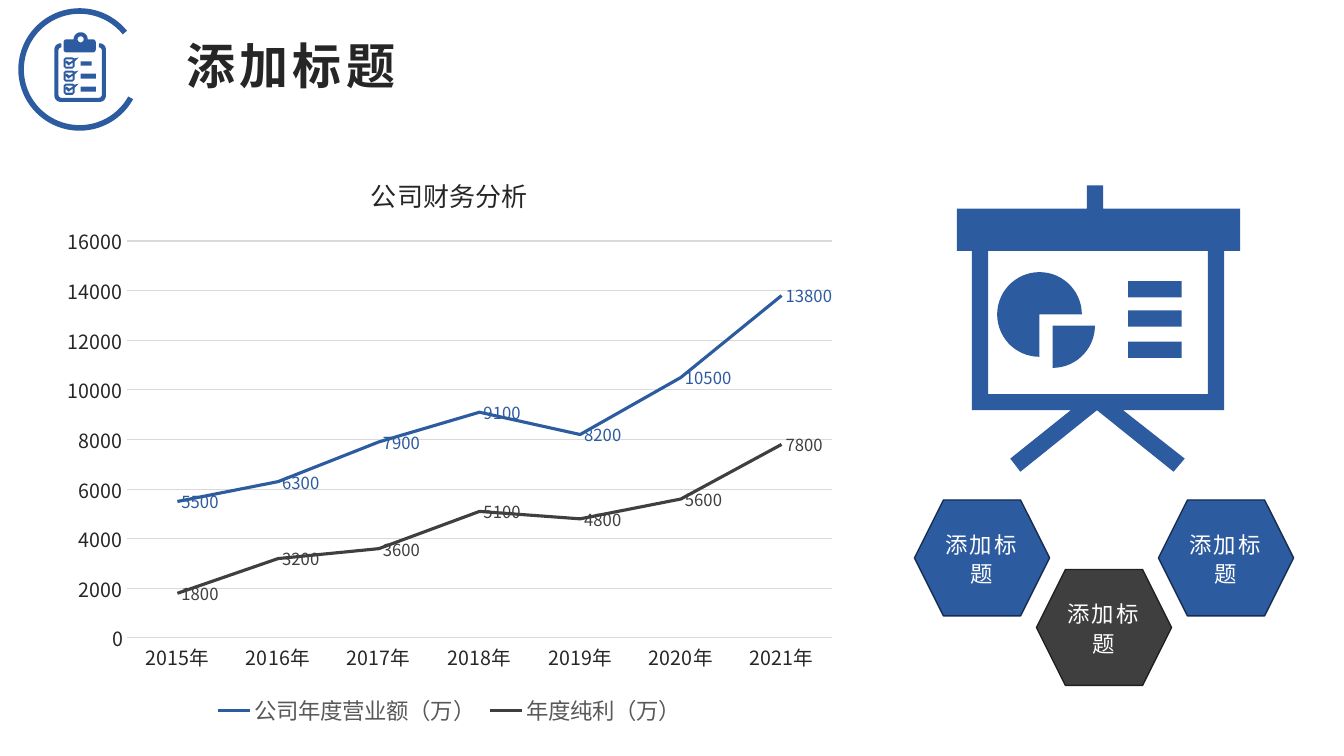
import math
from dataclasses import dataclass

from pptx import Presentation
from pptx import util as u
from pptx.chart import data as cd
from pptx.dml import color
from pptx.enum import chart as ch, shapes, text
from pptx.oxml import parse_xml
from pptx.oxml import ns
from pptx.oxml import xmlchemy as xc

FONT = "Noto Sans CJK SC"
COLORS = {
    "blue": "2D5B9F", "navy": "172D50", "dark": "3F3F3F", "black": "202020",
    "ink": "262626", "legend": "595959", "grid": "D9D9D9", "white": "FFFFFF",
}
Point = tuple[float, float]
Contour = list[Point]


@dataclass
class Hexagon:
    left: float
    top: float
    fill: str
    line: str


@dataclass
class Series:
    name: str
    values: tuple[int, ...]
    color: str


HEXAGONS = [
    Hexagon(9.07 + 1.21 * i, top, fill, line)
    for i, (top, fill, line) in enumerate(
        [(4.96, "blue", "navy"), (5.65, "dark", "black"), (4.96, "blue", "navy")])
]
YEARS = [f"{year}年" for year in range(2015, 2022)]
SERIES = [
    Series("公司年度营业额（万）", (5500, 6300, 7900, 9100, 8200, 10500, 13800), "blue"),
    Series("年度纯利（万）", (1800, 3200, 3600, 5100, 4800, 5600, 7800), "dark"),
]


def rgb(name: str) -> color.RGBColor:
    return color.RGBColor.from_string(COLORS[name])


def set_font(font, size: float, name: str, bold: bool = False) -> None:
    font.size = u.Pt(size)
    font.bold = bold
    font.color.rgb = rgb(name)
    font.name = FONT
    ea = xc.OxmlElement("a:ea")
    ea.set("typeface", FONT)
    font._element.find(ns.qn("a:latin")).addnext(ea)


def add_run(p, words: str, size: float, name: str, spacing: float, bold: bool = False) -> None:
    r = p.add_run()
    r.text = words
    set_font(r.font, size, name, bold)
    r.font._element.set("spc", str(round(spacing * 100)))


def rect(left: float, top: float, width: float, height: float) -> Contour:
    right, bottom = left + width, top + height
    return [(left, top), (right, top), (right, bottom), (left, bottom)]


def arc(x: float, y: float, radius: float, start: float, end: float) -> Contour:
    steps = max(4, round(abs(end - start) / 6))
    angles = [math.radians(start + (end - start) * i / steps) for i in range(steps + 1)]
    return [(x + radius * math.cos(a), y + radius * math.sin(a)) for a in angles]


def add_icon(s, contours: list[Contour]) -> None:
    scaled = [[(u.Inches(x), u.Inches(y)) for x, y in c] for c in contours]
    builder = s.shapes.build_freeform(*scaled[0][0], scale=1.0)
    builder.add_line_segments(scaled[0][1:], close=True)
    for contour in scaled[1:]:
        builder.move_to(*contour[0])
        builder.add_line_segments(contour[1:], close=True)
    sp = builder.convert_to_shape()
    sp.shadow.inherit = False
    sp.fill.solid()
    sp.fill.fore_color.rgb = rgb("blue")
    sp.line.fill.background()


def clipboard() -> list[Contour]:
    board = [
        (0.61, 0.47), (0.61, 0.43), *arc(0.6, 0.49, 0.06, 270, 180),
        *arc(0.6, 0.95, 0.06, 180, 90), *arc(0.99, 0.95, 0.06, 90, 0),
        *arc(0.99, 0.49, 0.06, 0, -90), (0.98, 0.43), (0.98, 0.47),
        *arc(0.98, 0.5, 0.03, -90, 0), *arc(0.98, 0.94, 0.03, 0, 90),
        *arc(0.61, 0.94, 0.03, 90, 180), *arc(0.61, 0.5, 0.03, 180, 270),
    ]
    clip = [
        *arc(0.66, 0.42, 0.03, 180, 270), *arc(0.8, 0.39, 0.07, 180, 360),
        *arc(0.92, 0.42, 0.03, 270, 360), *arc(0.92, 0.49, 0.03, 0, 90),
        *arc(0.66, 0.49, 0.03, 90, 180),
    ]
    box = [(0.74, 0.71), (0.72, 0.7), (0.65, 0.7), (0.63, 0.72), (0.63, 0.79),
           (0.65, 0.81), (0.72, 0.81), (0.74, 0.79), (0.74, 0.74), (0.78, 0.7)]
    tick = [(0.65, 0.72), (0.72, 0.72), (0.72, 0.73), (0.69, 0.75), (0.66, 0.73),
            (0.65, 0.75), (0.68, 0.78), (0.72, 0.75), (0.72, 0.79), (0.65, 0.79)]
    checks = [[(x, y + dy) for x, y in c] for dy in (-0.13, 0, 0.13) for c in (box, tick)]
    bars = [rect(0.8, 0.61, 0.11, 0.04), rect(0.8, 0.73, 0.15, 0.05),
            rect(0.8, 0.86, 0.15, 0.05)]
    return [board, clip, arc(0.8, 0.39, 0.03, 0, 360), *checks, *bars]


def easel() -> list[Contour]:
    stand = [
        (10.94, 2.07), (10.94, 1.84), (10.78, 1.84), (10.78, 2.07), (9.49, 2.07),
        (9.49, 2.49), (9.64, 2.49), (9.64, 4.07), (10.62, 4.07), (10.02, 4.55),
        (10.12, 4.68), (10.88, 4.07), (11.64, 4.68), (11.75, 4.55), (11.14, 4.07),
        (12.14, 4.07), (12.14, 2.49), (12.3, 2.49), (12.3, 2.07),
    ]
    pie = [(10.31, 3.12), *arc(10.31, 3.12, 0.42, 90, 360)]
    slice_ = [(10.44, 3.23), *arc(10.44, 3.23, 0.42, 0, 90)]
    bars = [rect(11.19, top, 0.53, 0.16) for top in (2.79, 3.08, 3.39)]
    return [stand, rect(9.8, 2.49, 2.18, 1.42), pie, slice_, *bars]


def add_ring(s) -> None:
    sp = s.shapes.add_shape(shapes.MSO_SHAPE.ARC, u.Inches(0.21), u.Inches(0.11),
                            u.Inches(1.16), u.Inches(1.16))
    sp.adjustments[0], sp.adjustments[1] = 17.42, 192.51
    sp.shadow.inherit = False
    sp.fill.background()
    sp.line.color.rgb = rgb("blue")
    sp.line.width = u.Pt(4)


def add_hexagon(s, h: Hexagon) -> None:
    sp = s.shapes.add_shape(shapes.MSO_SHAPE.HEXAGON, u.Inches(h.left), u.Inches(h.top),
                            u.Inches(1.34), u.Inches(1.15))
    sp.shadow.inherit = False
    sp.fill.solid()
    sp.fill.fore_color.rgb = rgb(h.fill)
    sp.line.color.rgb = rgb(h.line)
    sp.line.width = u.Pt(1)
    tf = sp.text_frame
    tf.word_wrap = True
    tf.vertical_anchor = text.MSO_ANCHOR.MIDDLE
    p = tf.paragraphs[0]
    p.alignment = text.PP_ALIGN.CENTER
    p.line_spacing = 1.1
    add_run(p, "添加标题", 16, "white", 1.5)


def add_title(s) -> None:
    tf = s.shapes.add_textbox(u.Inches(1.75), u.Inches(0.3), u.Inches(9.45),
                              u.Inches(0.69)).text_frame
    tf.word_wrap = True
    tf.vertical_anchor = text.MSO_ANCHOR.MIDDLE
    add_run(tf.paragraphs[0], "添加标题", 35, "ink", 3, bold=True)


def add_finance_chart(s) -> None:
    data = cd.CategoryChartData()
    data.categories = YEARS
    for item in SERIES:
        data.add_series(item.name, item.values)
    chart = s.shapes.add_chart(ch.XL_CHART_TYPE.LINE, u.Inches(0.51), u.Inches(1.5),
                               u.Inches(7.9), u.Inches(5.75), data).chart
    set_font(chart.font, 10, "ink")
    chart.has_title = True
    add_run(chart.chart_title.text_frame.paragraphs[0], "公司财务分析", 18.6, "ink", 0)
    chart.has_legend = True
    chart.legend.position = ch.XL_LEGEND_POSITION.BOTTOM
    chart.legend.include_in_layout = False
    set_font(chart.legend.font, 16, "legend")
    for axis in (chart.category_axis, chart.value_axis):
        axis.major_tick_mark = axis.minor_tick_mark = ch.XL_TICK_MARK.NONE
        axis.format.line.fill.background()
        set_font(axis.tick_labels.font, 14, "ink")
    axis = chart.value_axis
    axis.minimum_scale, axis.maximum_scale, axis.major_unit = 0, 16000, 2000
    axis.major_gridlines.format.line.color.rgb = rgb("grid")
    axis.major_gridlines.format.line.width = u.Pt(0.75)
    plot = chart.plots[0]
    plot.vary_by_categories = False
    for line, item in zip(plot.series, SERIES):
        line.smooth = False
        line.marker.style = ch.XL_MARKER_STYLE.NONE
        line.format.line.color.rgb = rgb(item.color)
        line.format.line.width = u.Pt(2.25)
        labels = line.data_labels
        labels.show_value = True
        labels.position = ch.XL_LABEL_POSITION.RIGHT
        set_font(labels.font, 11.9, item.color)
    area = chart._chartSpace.find(".//" + ns.qn("c:plotArea"))
    for old in area.findall(ns.qn("c:layout")):
        area.remove(old)
    sizes = "".join(f'<c:{k} val="{v}"/>' for k, v in
                    {"x": 0.095, "y": 0.155, "w": 0.885, "h": 0.685}.items())
    area.insert(0, parse_xml(
        f'<c:layout {ns.nsdecls("c")}><c:manualLayout><c:layoutTarget val="inner"/>'
        f'<c:xMode val="edge"/><c:yMode val="edge"/>{sizes}</c:manualLayout></c:layout>'))


def main() -> None:
    prs = Presentation()
    prs.slide_width, prs.slide_height = u.Inches(13.33), u.Inches(7.5)
    s = prs.slides.add_slide(prs.slide_layouts[6])
    add_ring(s)
    add_icon(s, clipboard())
    for h in HEXAGONS:
        add_hexagon(s, h)
    add_icon(s, easel())
    add_finance_chart(s)
    add_title(s)
    prs.save("out.pptx")


if __name__ == "__main__":
    main()
